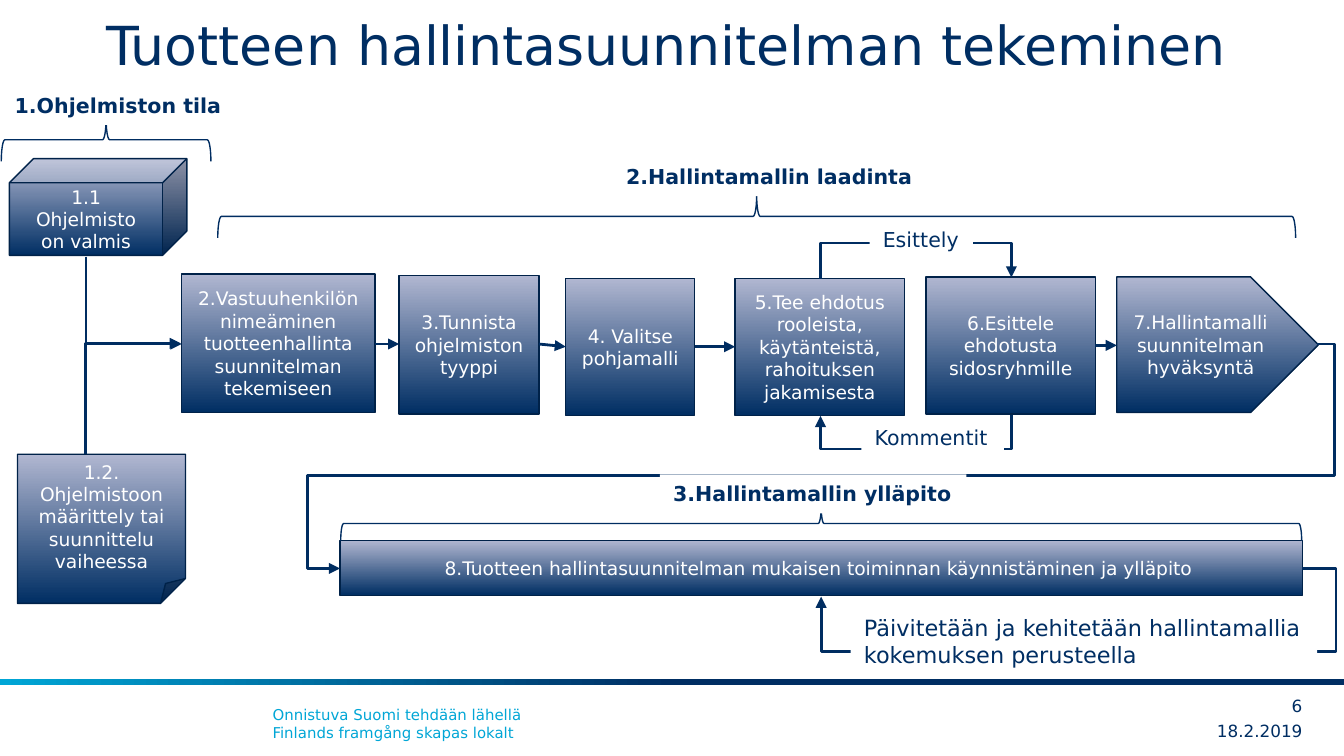
"""Build the slide on drawing up a product management plan."""
from dataclasses import dataclass, field
from typing import Any

import pptx
import pptx.dml.color
import pptx.enum.shapes
import pptx.enum.text
import pptx.oxml
import pptx.oxml.ns
import pptx.util
from pptx.util import Inches

Kind = pptx.enum.shapes.MSO_SHAPE
Joint = pptx.enum.shapes.MSO_CONNECTOR
Align = pptx.enum.text.PP_ALIGN
Anchor = pptx.enum.text.MSO_ANCHOR
Fit = pptx.enum.text.MSO_AUTO_SIZE
qn = pptx.oxml.ns.qn


@dataclass(frozen=True)
class Theme:
    """Colours, font and type sizes."""
    font: str = "DejaVu Sans"
    navy: str = "002E63"
    cyan: str = "00A6D6"
    pale: str = "B1B7D1"
    edge: str = "002249"
    wire: str = "002D61"
    white: str = "FFFFFF"
    title: float = 28.8
    note: float = 12
    label: float = 11
    step: float = 10
    number: float = 9
    footer: float = 8


@dataclass(frozen=True)
class Area:
    """A place on the page in inches."""
    left: float
    top: float
    width: float
    height: float

    def lengths(self) -> list[int]:
        """Return the four measures as lengths."""
        return [Inches(v) for v in (self.left, self.top, self.width, self.height)]


@dataclass(frozen=True)
class Step:
    """A filled box of the process."""
    kind: Any
    area: Area
    lines: tuple[str, ...]


@dataclass(frozen=True)
class Route:
    """A bent arrow: unturned frame, turn, flips and bend distances."""
    preset: str
    area: Area
    turn: int = 0
    flips: str = ""
    bends: tuple[float, ...] = ()


@dataclass(frozen=True)
class Label:
    """A piece of text with its own frame."""
    area: Area
    lines: tuple[str, ...]
    size: float
    color: str
    bold: bool = False
    align: Any = Align.LEFT
    frame: dict[str, Any] = field(default_factory=dict)
    fill: str = ""


THEME = Theme()
FITTED = {"word_wrap": False, "auto_size": Fit.SHAPE_TO_FIT_TEXT}
NO_MARGIN = {f"margin_{side}": 0 for side in ("left", "top", "right", "bottom")}
NUMBER = {**NO_MARGIN, "word_wrap": True, "vertical_anchor": Anchor.MIDDLE}

STEPS = (
    Step(Kind.CUBE, Area(0.07, 1.18, 1.32, 0.72), ("1.1 Ohjelmisto on valmis",)),
    Step(Kind.FOLDED_CORNER, Area(0.13, 3.38, 1.25, 1.11),
         ("1.2.", "Ohjelmistoon määrittely tai suunnittelu vaiheessa")),
    Step(Kind.RECTANGLE, Area(1.35, 2.04, 1.44, 1.03),
         ("2.Vastuuhenkilön nimeäminen", "tuotteenhallinta suunnitelman tekemiseen")),
    Step(Kind.RECTANGLE, Area(2.97, 2.05, 1.04, 1.03), ("3.Tunnista ohjelmiston tyyppi",)),
    Step(Kind.RECTANGLE, Area(4.21, 2.07, 0.96, 1.02), ("4. Valitse pohjamalli",)),
    Step(Kind.RECTANGLE, Area(5.47, 2.07, 1.26, 1.02),
         ("5.Tee ehdotus rooleista, käytänteistä,", "rahoituksen jakamisesta")),
    Step(Kind.RECTANGLE, Area(6.89, 2.06, 1.26, 1.02), ("6.Esittele ehdotusta sidosryhmille",)),
    Step(Kind.PENTAGON, Area(8.31, 2.06, 1.5, 1.01),
         ("7.Hallintamalli", "suunnitelman hyväksyntä")),
    Step(Kind.RECTANGLE, Area(2.53, 4.02, 7.16, 0.41),
         ("8.Tuotteen hallintasuunnitelman mukaisen toiminnan käynnistäminen ja ylläpito ",)),
)
ARROWS = ((2.79, 2.56, 2.97, 2.56), (4.01, 2.56, 4.21, 2.58),
          (5.17, 2.58, 5.47, 2.58), (8.15, 2.57, 8.31, 2.57))
ROUTES = (
    Route("bentConnector3", Area(6.81, 2.38, 0.01, 1.42), 90, "", (0.26,)),
    Route("bentConnector3", Area(6.81, 1.36, 0.01, 1.42), 90, "HV", (0.27,)),
    Route("bentConnector2", Area(0.58, 2.61, 0.82, 0.71), 90, "HV"),
    Route("bentConnector2", Area(0.67, 1.88, 0.65, 0.71), 270, "H"),
    Route("bentConnector5", Area(2.53, 2.56, 7.27, 1.67), 0, "H", (-0.13, 0.98, 7.51)),
    Route("bentConnector4", Area(6.11, 4.23, 3.58, 0.21), 0, "H", (-0.25, 0.62)),
)
BRACES = (Area(0.63, 0.26, 0.32, 1.56), Area(5.47, -2.4, 0.32, 8.02),
          Area(5.98, 0.32, 0.26, 7.15))
TAGS = (
    (Area(6.47, 1.64, 0.77, 0.29), "Esittely", False),
    (Area(6.41, 3.11, 1.06, 0.29), "Kommentit", False),
    (Area(0.01, 0.64, 1.75, 0.29), "1.Ohjelmiston tila", True),
    (Area(4.56, 1.17, 2.34, 0.29), "2.Hallintamallin laadinta", True),
    (Area(4.91, 3.53, 2.28, 0.29), "3.Hallintamallin ylläpito", True),
)
LABELS = (
    Label(Area(1.93, 5.2, 6.54, 0.37),
          ("Onnistuva Suomi tehdään lähellä\vFinlands framgång skapas lokalt",),
          THEME.footer, THEME.cyan, frame={"word_wrap": True}),
    Label(Area(8.7, 5.33, 0.99, 0.22), ("18.2.2019",), THEME.number, THEME.navy,
          align=Align.RIGHT, frame=NUMBER),
    Label(Area(9.26, 5.14, 0.43, 0.22), ("6",), THEME.number, THEME.navy,
          align=Align.RIGHT, frame=NUMBER),
    Label(Area(6.33, 4.52, 3.47, 0.5),
          ("Päivitetään ja kehitetään hallintamallia kokemuksen perusteella",),
          THEME.note, THEME.navy, frame={**FITTED, "word_wrap": True}, fill=THEME.white),
    *(Label(area, (text,), THEME.label, THEME.navy, bold, frame=FITTED, fill=THEME.white)
      for area, text, bold in TAGS),
)


def rgb(code: str) -> pptx.dml.color.RGBColor:
    """Turn a hex code into a colour."""
    return pptx.dml.color.RGBColor.from_string(code)


def assign(target: Any, values: dict[str, Any]) -> None:
    """Set every attribute named in the format values."""
    for name, value in values.items():
        setattr(target, name, value)


def write(box: Any, lines: tuple[str, ...], size: float, color: str, align: Any,
          frame: dict[str, Any], bold: bool = False) -> None:
    """Fill a box with formatted paragraphs."""
    assign(box.text_frame, frame)
    box.text_frame.text = "\n".join(lines)
    for para in box.text_frame.paragraphs:
        para.alignment = align
        for span in para.runs:
            assign(span.font, {"name": THEME.font, "size": pptx.util.Pt(size), "bold": bold})
            span.font.color.rgb = rgb(color)


def outline(item: Any, color: str, width: float) -> None:
    """Give a shape or connector a solid line."""
    item.line.color.rgb = rgb(color)
    item.line.width = pptx.util.Pt(width)


def blend(box: Any, stops: tuple[tuple[float, str], ...], angle: float) -> None:
    """Fill a box with a two-stop gradient."""
    box.fill.gradient()
    box.fill.gradient_angle = angle
    for stop, (position, color) in zip(box.fill.gradient_stops, stops):
        stop.position = position
        stop.color.rgb = rgb(color)


def add_box(page: Any, kind: Any, area: Area) -> Any:
    """Add a preset shape without a shadow."""
    box = page.shapes.add_shape(kind, *area.lengths())
    box.shadow.inherit = False
    return box


def add_step(page: Any, step: Step) -> None:
    """Draw one process box."""
    box = add_box(page, step.kind, step.area)
    blend(box, ((0, THEME.navy), (1, THEME.pale)), 90)
    outline(box, THEME.edge, 0.75)
    write(box, step.lines, THEME.step, THEME.white, Align.CENTER,
          {"word_wrap": True, "vertical_anchor": Anchor.MIDDLE})


def add_arrow(page: Any, joint: Any, ends: tuple[float, ...]) -> Any:
    """Add a connector with an arrowhead at its end."""
    arrow = page.shapes.add_connector(joint, *(Inches(v) for v in ends))
    outline(arrow, THEME.wire, 1.5)
    properties = arrow._element.spPr
    head = pptx.oxml.ns.nsdecls("a")
    properties.find(qn("a:ln")).append(pptx.oxml.parse_xml(f'<a:tailEnd {head} type="triangle"/>'))
    properties.append(pptx.oxml.parse_xml(f"<a:effectLst {head}/>"))
    return arrow


def add_route(page: Any, route: Route) -> None:
    """Draw a bent arrow, its bends measured along width and height in turn."""
    area = route.area
    ends = (area.left, area.top, area.left + area.width, area.top + area.height)
    properties = add_arrow(page, Joint.ELBOW, ends)._element.spPr
    transform = properties.find(qn("a:xfrm"))
    transform.set("rot", str(route.turn * 60000))
    for axis in route.flips:
        transform.set(f"flip{axis}", "1")
    geometry = properties.find(qn("a:prstGeom"))
    geometry.set("prst", route.preset)
    for index, bend in enumerate(route.bends):
        share = bend / (area.height if index % 2 else area.width)
        guide = geometry.find(qn("a:avLst")).makeelement(qn("a:gd"), {
            "name": f"adj{index + 1}", "fmla": f"val {round(share * 100000)}"})
        geometry.find(qn("a:avLst")).append(guide)


def add_brace(page: Any, area: Area) -> None:
    """Draw a brace that opens downwards."""
    brace = add_box(page, Kind.RIGHT_BRACE, area)
    brace.rotation = 270
    brace.fill.background()
    outline(brace, THEME.wire, 0.75)


def add_label(page: Any, label: Label) -> None:
    """Draw one text label."""
    box = page.shapes.add_textbox(*label.area.lengths())
    if label.fill:
        box.fill.solid()
        box.fill.fore_color.rgb = rgb(label.fill)
    write(box, label.lines, label.size, label.color, label.align, label.frame, label.bold)


def main() -> None:
    """Build and save the deck."""
    deck = pptx.Presentation()
    assign(deck, {"slide_width": Inches(10), "slide_height": Inches(10) * 9 // 16})
    page = deck.slides.add_slide(deck.slide_layouts[5])
    title = page.shapes.title
    assign(title, dict(zip(("left", "top", "width", "height"),
                           Area(0.79, 0.19, 8.51, 0.43).lengths())))
    write(title, ("Tuotteen hallintasuunnitelman tekeminen",), THEME.title, THEME.navy, Align.LEFT,
          {"margin_left": 0, "margin_right": 0, "word_wrap": True, "auto_size": Fit.NONE,
           "vertical_anchor": Anchor.BOTTOM})
    bar = add_box(page, Kind.RECTANGLE, Area(0, 5.05, 10, 0.05))
    blend(bar, ((0.5, THEME.navy), (1, THEME.cyan)), 180)
    bar.line.fill.background()
    for step in STEPS:
        add_step(page, step)
    for ends in ARROWS:
        add_arrow(page, Joint.STRAIGHT, ends)
    for route in ROUTES:
        add_route(page, route)
    for area in BRACES:
        add_brace(page, area)
    for label in LABELS:
        add_label(page, label)
    deck.save("out.pptx")


if __name__ == "__main__":
    main()
